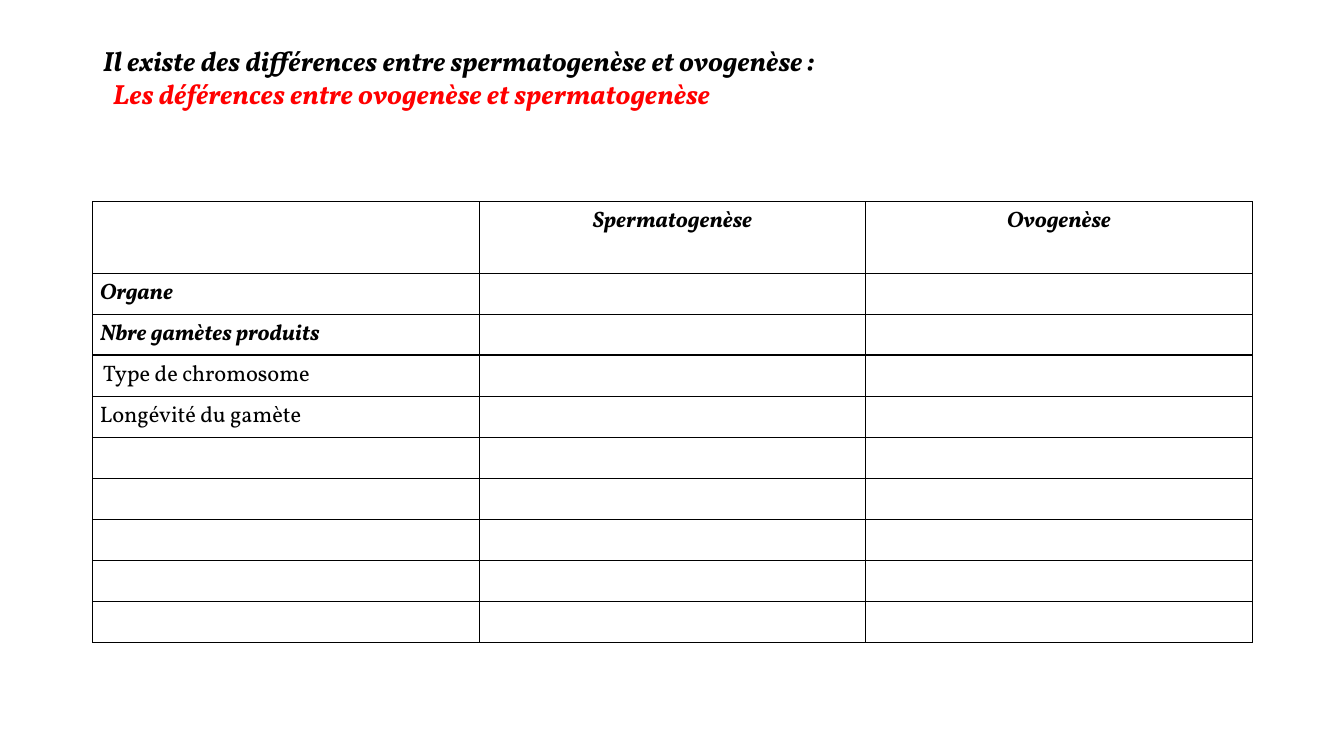
"""Build the slide comparing spermatogenesis and oogenesis in a table."""
from lxml import etree
from pptx import Presentation
from pptx.dml.color import RGBColor
from pptx.enum.text import MSO_ANCHOR, PP_ALIGN
from pptx.oxml.ns import qn
from pptx.util import Inches, Pt

BLACK = RGBColor(0x00, 0x00, 0x00)
RED = RGBColor(0xFF, 0x00, 0x00)
FONT = "Vollkorn"
LEFT, CENTER = PP_ALIGN.LEFT, PP_ALIGN.CENTER
TOP = MSO_ANCHOR.TOP

HEADERS = ["Spermatogenèse", "Ovogenèse"]
CRITERIA = ["Organe", "Nbre gamètes produits", "Type de chromosome", "Longévité du gamète"]
ROWS, COLS = 10, 3


def style(p, size, color, strong, align, spacing):
    p.alignment = align
    p.line_spacing = spacing
    for r in p.runs:
        r.font.name = FONT
        r.font.size = Pt(size)
        r.font.color.rgb = color
        r.font.bold = r.font.italic = strong


def add_borders(cell):
    tcPr = cell._tc.get_or_add_tcPr()
    for side in ("lnL", "lnR", "lnT", "lnB"):
        ln = etree.SubElement(tcPr, qn(f"a:{side}"), w=str(Pt(1)))
        fill = etree.SubElement(ln, qn("a:solidFill"))
        etree.SubElement(fill, qn("a:srgbClr"), val=str(BLACK))


prs = Presentation()
prs.slide_width, prs.slide_height = Inches(13.33), Inches(7.5)
s = prs.slides.add_slide(prs.slide_layouts[5])

title = s.shapes.title
title.left, title.top = Inches(0.92), Inches(0.4)
title.width, title.height = Inches(11.5), Inches(1.45)
tf = title.text_frame
tf.word_wrap = True
tf.vertical_anchor = TOP
tf.text = (
    "Il existe des différences entre spermatogenèse et ovogenèse :\n"
    "Les déférences entre ovogenèse et spermatogenèse"
)
for p, color in zip(tf.paragraphs, (BLACK, RED)):
    style(p, 19.8, color, True, LEFT, 0.98)
    p.space_before = Pt(0)
tf.paragraphs[1]._p.get_or_add_pPr().set("marL", str(Inches(0.1)))

header_height, table_height = Inches(0.71), Inches(4.37)
frame = s.shapes.add_table(ROWS, COLS, Inches(0.92), Inches(2), Inches(11.5), table_height)
table = frame.table
table.first_row = table.horz_banding = False
for i, row in enumerate(table.rows):
    row.height = (table_height - header_height) // (ROWS - 1) if i else header_height
    for cell in row.cells:
        add_borders(cell)
        cell.fill.background()

entries = [(0, j, text, True, CENTER) for j, text in enumerate(HEADERS, 1)]
entries += [(i, 0, text, i < 3, LEFT) for i, text in enumerate(CRITERIA, 1)]
for i, j, text, strong, align in entries:
    cell = table.cell(i, j)
    cell.text = text
    default_inset = text == "Type de chromosome"
    if not default_inset:
        cell.margin_left = cell.margin_right = Inches(0.07)
        cell.margin_top = cell.margin_bottom = 0
    style(cell.text_frame.paragraphs[0], 16, BLACK, strong, align, 1.0 if default_inset else 1.15)

prs.save("out.pptx")
